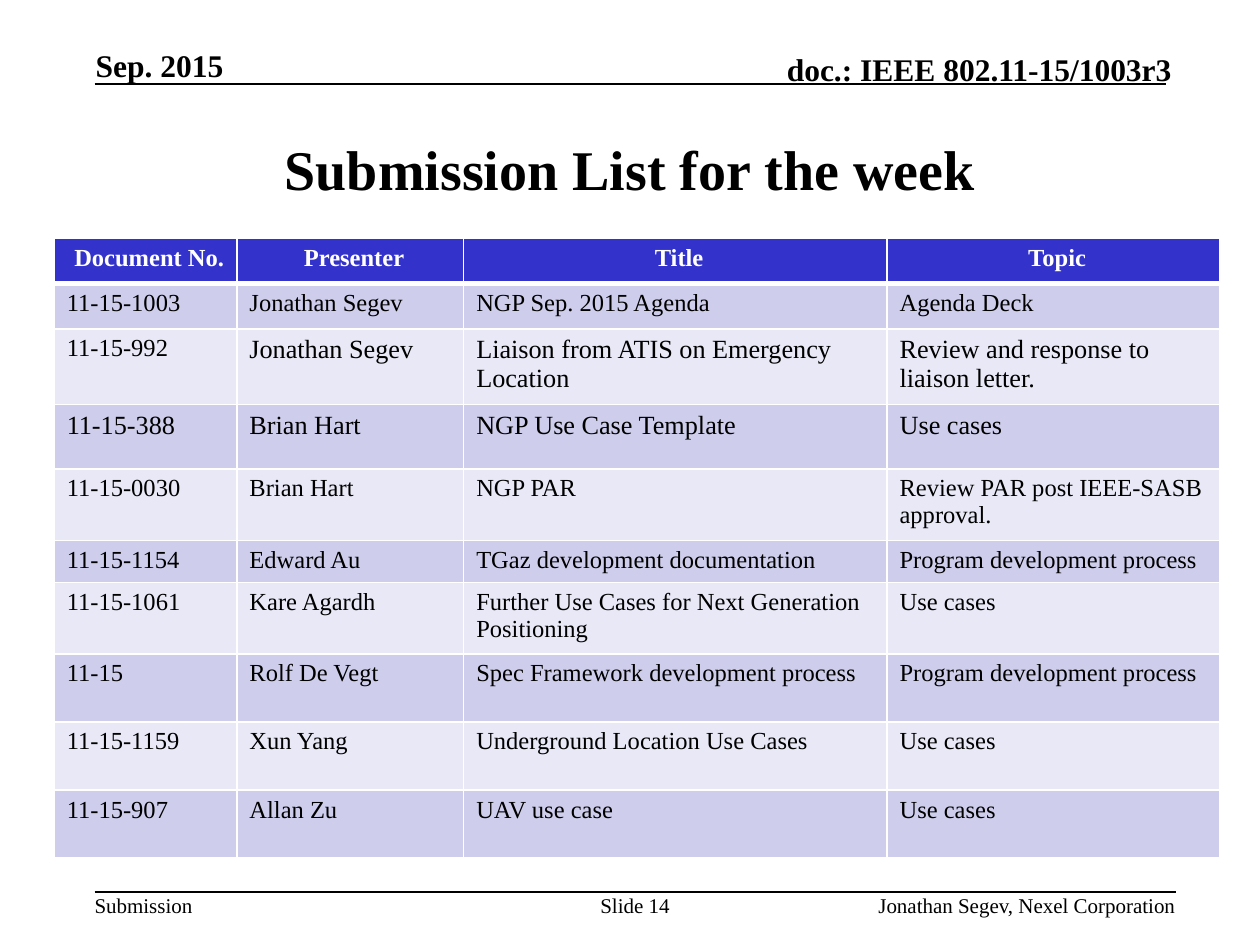
from dataclasses import dataclass

from lxml.etree import SubElement
from pptx import Presentation
from pptx.dml.color import RGBColor
from pptx.enum.text import MSO_ANCHOR, PP_ALIGN
from pptx.oxml.ns import qn
from pptx.util import Inches, Pt

SLIDE_WIDTH, SLIDE_HEIGHT = Inches(10), Inches(7.5)
FONT = "Times New Roman"
BLACK = RGBColor(0x00, 0x00, 0x00)
WHITE = RGBColor(0xFF, 0xFF, 0xFF)
HEADING_BLUE = RGBColor(0x33, 0x33, 0xCC)
BANDS = (RGBColor(0xCE, 0xCE, 0xEC), RGBColor(0xE8, 0xE8, 0xF6))

HEADINGS = ("Document No.", "Presenter", "Title", "Topic")
SUBMISSIONS = (
    ("11-15-1003", "Jonathan Segev", "NGP Sep. 2015 Agenda", "Agenda Deck"),
    ("11-15-992", "Jonathan Segev", "Liaison from ATIS on Emergency Location",
     "Review and response to liaison letter."),
    ("11-15-388", "Brian Hart", "NGP Use Case Template", "Use cases"),
    ("11-15-0030", "Brian Hart", "NGP PAR", "Review PAR post IEEE-SASB approval."),
    ("11-15-1154", "Edward Au", "TGaz development documentation",
     "Program development process"),
    ("11-15-1061", "Kare Agardh", "Further Use Cases for Next Generation Positioning",
     "Use cases"),
    ("11-15", "Rolf De Vegt", "Spec Framework development process",
     "Program development process"),
    ("11-15-1159", "Xun Yang", "Underground Location Use Cases", "Use cases"),
    ("11-15-907", "Allan Zu", "UAV use case", "Use cases"),
)
# Shares of the table's width and height
COLUMN_SHARES = (1.45, 1.8, 3.36, 2.64)
ROW_SHARES = (0.36, 0.36, 0.56, 0.51, 0.53, 0.32, 0.53, 0.54, 0.54, 0.54)
# Cells set one point larger than the rest, as (row, column)
LARGER_CELLS = {(2, 1), (2, 2), (2, 3), (3, 0), (3, 1), (3, 2), (3, 3)}


@dataclass
class Box:
    """An area in percent of the slide's width and height."""
    left: float
    top: float
    width: float
    height: float

    def emu(self):
        return (across(self.left), down(self.top),
                across(self.width), down(self.height))

    def shifted(self, right=0, below=0):
        return Box(self.left + right, self.top + below, self.width, self.height)


def across(percent):
    return round(SLIDE_WIDTH * percent / 100)


def down(percent):
    return round(SLIDE_HEIGHT * percent / 100)


def style(paragraph, size, color=BLACK, bold=False, align=PP_ALIGN.LEFT):
    paragraph.alignment = align
    font = paragraph.font
    font.name, font.size, font.bold = FONT, Pt(size), bold
    font.color.rgb = color


def add_label(slide, box, text, size, bold=False, align=PP_ALIGN.LEFT,
              anchor=MSO_ANCHOR.TOP):
    frame = slide.shapes.add_textbox(*box.emu()).text_frame
    frame.word_wrap = True
    frame.vertical_anchor = anchor
    frame.margin_left = frame.margin_right = 0
    frame.margin_top = frame.margin_bottom = 0
    frame.text = text
    style(frame.paragraphs[0], size, bold=bold, align=align)


def add_rule(slide, box, percent_down):
    left, _, width, _ = box.emu()
    y = down(percent_down)
    rule = slide.shapes.add_connector(1, left, y, left + width, y)
    rule.line.color.rgb = BLACK
    rule.line.width = Pt(1)
    SubElement(rule._element.spPr, qn("a:effectLst"))


def add_header(slide, box):
    add_rule(slide, box, box.top + box.height)
    add_label(slide, box.shifted(right=0.1), "Sep. 2015", 18, True,
              anchor=MSO_ANCHOR.BOTTOM)
    add_label(slide, box.shifted(right=0.5, below=0.4),
              "doc.: IEEE 802.11-15/1003r3", 18, True,
              PP_ALIGN.RIGHT, MSO_ANCHOR.BOTTOM)


def add_title(slide, box):
    add_label(slide, box, "Submission List for the week", 32, True,
              PP_ALIGN.CENTER, MSO_ANCHOR.MIDDLE)


def add_footer(slide, box):
    add_rule(slide, box, box.top)
    for text, align in (("Submission", PP_ALIGN.LEFT),
                        ("Slide 14", PP_ALIGN.CENTER),
                        ("Jonathan Segev, Nexel Corporation", PP_ALIGN.RIGHT)):
        add_label(slide, box, text, 12, align=align)


def set_borders(cell, top=1, bottom=1):
    properties = cell._tc.get_or_add_tcPr()
    for side, points in (("L", 1), ("R", 1), ("T", top), ("B", bottom)):
        border = SubElement(properties, qn(f"a:ln{side}"), w=str(Pt(points)))
        fill = SubElement(border, qn("a:solidFill"))
        SubElement(fill, qn("a:srgbClr"), val=str(WHITE))


def fill_cell(cell, text, row, column):
    is_heading = row == 0
    cell.text = text
    cell.margin_right = Inches(0.04 if is_heading else 0.1)
    set_borders(cell, top=3 if row == 1 else 1, bottom=3 if is_heading else 1)
    cell.fill.solid()
    paragraph = cell.text_frame.paragraphs[0]
    if is_heading:
        cell.fill.fore_color.rgb = HEADING_BLUE
        style(paragraph, 14, WHITE, True, PP_ALIGN.CENTER)
    else:
        cell.fill.fore_color.rgb = BANDS[(row - 1) % 2]
        style(paragraph, 15 if (row, column) in LARGER_CELLS else 14)


def add_submission_table(slide, box):
    rows = (HEADINGS, *SUBMISSIONS)
    left, top, width, height = box.emu()
    table = slide.shapes.add_table(len(rows), len(HEADINGS),
                                   left, top, width, height).table
    for column, share in zip(table.columns, COLUMN_SHARES):
        column.width = round(width * share / sum(COLUMN_SHARES))
    for row, share in zip(table.rows, ROW_SHARES):
        row.height = round(height * share / sum(ROW_SHARES))
    for r, texts in enumerate(rows):
        for c, text in enumerate(texts):
            fill_cell(table.cell(r, c), text, r, c)


def main():
    presentation = Presentation()
    presentation.slide_width = SLIDE_WIDTH
    presentation.slide_height = SLIDE_HEIGHT
    slide = presentation.slides.add_slide(presentation.slide_layouts[6])
    add_header(slide, Box(7.5, 4.8, 85, 4.1))
    add_title(slide, Box(7.5, 10, 85, 15.5))
    add_footer(slide, Box(7.5, 94.4, 85.8, 2.7))
    add_submission_table(slide, Box(4.3, 25.2, 92.5, 63.9))
    presentation.save("out.pptx")


if __name__ == "__main__":
    main()
